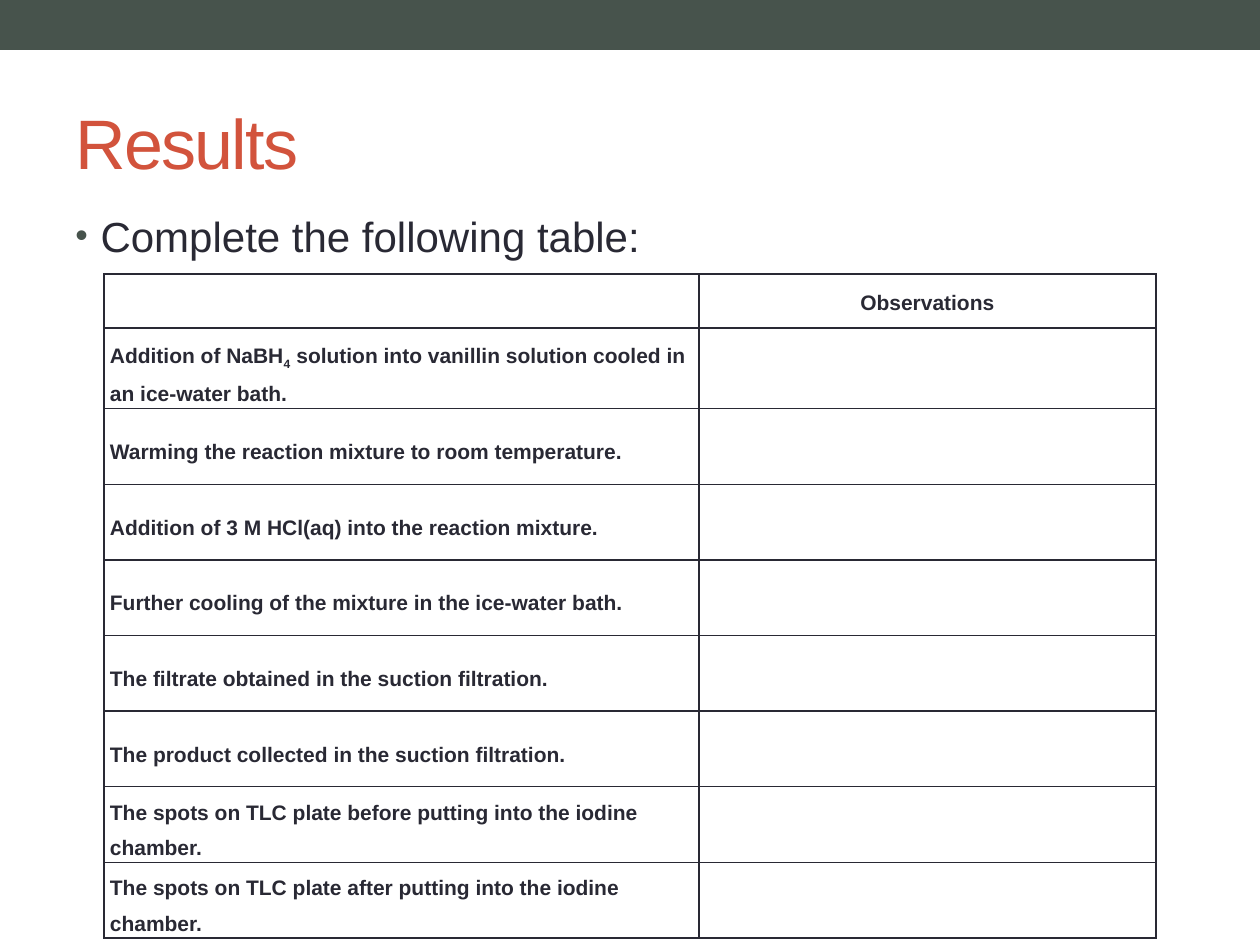
"""Build the Results slide with its observation table."""
from lxml.etree import SubElement
from pptx import Presentation
from pptx.dml.color import RGBColor
from pptx.enum.shapes import MSO_SHAPE
from pptx.enum.text import MSO_ANCHOR as ANCHOR, PP_ALIGN as ALIGN
from pptx.oxml.ns import qn
from pptx.util import Pt

PX = 914400 // 126
COLORS = {"band": "47534C", "title": "D2533C", "ink": "292934"}
TITLE = "Results"
PROMPT = "Complete the following table:"
HEADER = "Observations"
STEPS = [
    ("Addition of NaBH", "4", " solution into vanillin solution cooled in an ice-water bath."),
    ("Warming the reaction mixture to room temperature.",),
    ("Addition of 3 M HCl(aq) into the reaction mixture.",),
    ("Further cooling of the mixture in the ice-water bath.",),
    ("The filtrate obtained in the suction filtration.",),
    ("The product collected in the suction filtration.",),
    ("The spots on TLC plate before putting into the iodine chamber.",),
    ("The spots on TLC plate after putting into the iodine chamber.",),
]
TABLE_LEFT, TABLE_TOP = 104, 274
COL_WIDTHS = (595, 457)
HEADER_HEIGHT, STEPS_HEIGHT = 54, 605


def px(*values):
    return [v * PX for v in values]


def rgb(name):
    return RGBColor.from_string(COLORS[name])


def write(tf, *parts, size=12, color="ink", bold=False, align=ALIGN.LEFT,
          spacing=None, tracking=None):
    p = tf.paragraphs[0]
    p.alignment = align
    if spacing:
        p.line_spacing = spacing
    for i, part in enumerate(parts):
        r = p.add_run()
        r.text = part
        r.font.name, r.font.size, r.font.bold = "Arial", Pt(size), bold
        r.font.color.rgb = rgb(color)
        rPr = r._r.get_or_add_rPr()
        if i % 2:
            rPr.set("baseline", "-25000")
        if tracking:
            rPr.set("spc", str(tracking * 100))
    return p


def add_text(s, box, text, anchor=ANCHOR.TOP, **fmt):
    tf = s.shapes.add_textbox(*px(*box)).text_frame
    tf.word_wrap = True
    tf.vertical_anchor = anchor
    return write(tf, text, **fmt)


def add_bullet(p):
    pPr = p._p.get_or_add_pPr()
    pPr.set("marL", "182880")
    pPr.set("indent", "-182880")
    color = SubElement(pPr, qn("a:buClr"))
    SubElement(color, qn("a:srgbClr"), val=COLORS["band"])
    SubElement(pPr, qn("a:buSzPct"), val="85000")
    SubElement(pPr, qn("a:buFont"), typeface="Arial")
    SubElement(pPr, qn("a:buChar"), char="•")


def style_cell(cell):
    cell.margin_left = cell.margin_right = 6 * PX
    cell.margin_top = cell.margin_bottom = 0
    cell.vertical_anchor = ANCHOR.MIDDLE
    tcPr = cell._tc.get_or_add_tcPr()
    for side in ("lnL", "lnR", "lnT", "lnB"):
        ln = SubElement(tcPr, qn(f"a:{side}"), w=str(Pt(1)))
        fill = SubElement(ln, qn("a:solidFill"))
        SubElement(fill, qn("a:srgbClr"), val=COLORS["ink"])
    cell.fill.background()


def add_results_table(s):
    box = px(TABLE_LEFT, TABLE_TOP, sum(COL_WIDTHS), HEADER_HEIGHT + STEPS_HEIGHT)
    table = s.shapes.add_table(len(STEPS) + 1, len(COL_WIDTHS), *box).table
    table.first_row = table.horz_banding = False
    for col, width in zip(table.columns, px(*COL_WIDTHS)):
        col.width = width
    for i, row in enumerate(table.rows):
        row.height = STEPS_HEIGHT * PX // len(STEPS) if i else HEADER_HEIGHT * PX
    for cell in table.iter_cells():
        style_cell(cell)
    write(table.cell(0, 1).text_frame, HEADER, bold=True, align=ALIGN.CENTER, spacing=1.15)
    for i, parts in enumerate(STEPS, 1):
        write(table.cell(i, 0).text_frame, *parts, bold=True, spacing=1.5)


def main():
    prs = Presentation()
    prs.slide_width, prs.slide_height = px(1260, 945)
    s = prs.slides.add_slide(prs.slide_layouts[6])
    band = s.shapes.add_shape(MSO_SHAPE.RECTANGLE, *px(0, 0, 1260, 50))
    band.shadow.inherit = False
    band.fill.solid()
    band.fill.fore_color.rgb = rgb("band")
    band.line.fill.background()
    add_text(s, (63, 73, 1134, 136), TITLE, anchor=ANCHOR.MIDDLE, size=40,
             color="title", tracking=-1)
    p = add_text(s, (63, 204, 1134, 688), PROMPT, size=24)
    p.space_before = Pt(5)
    add_bullet(p)
    add_results_table(s)
    prs.save("out.pptx")


if __name__ == "__main__":
    main()
